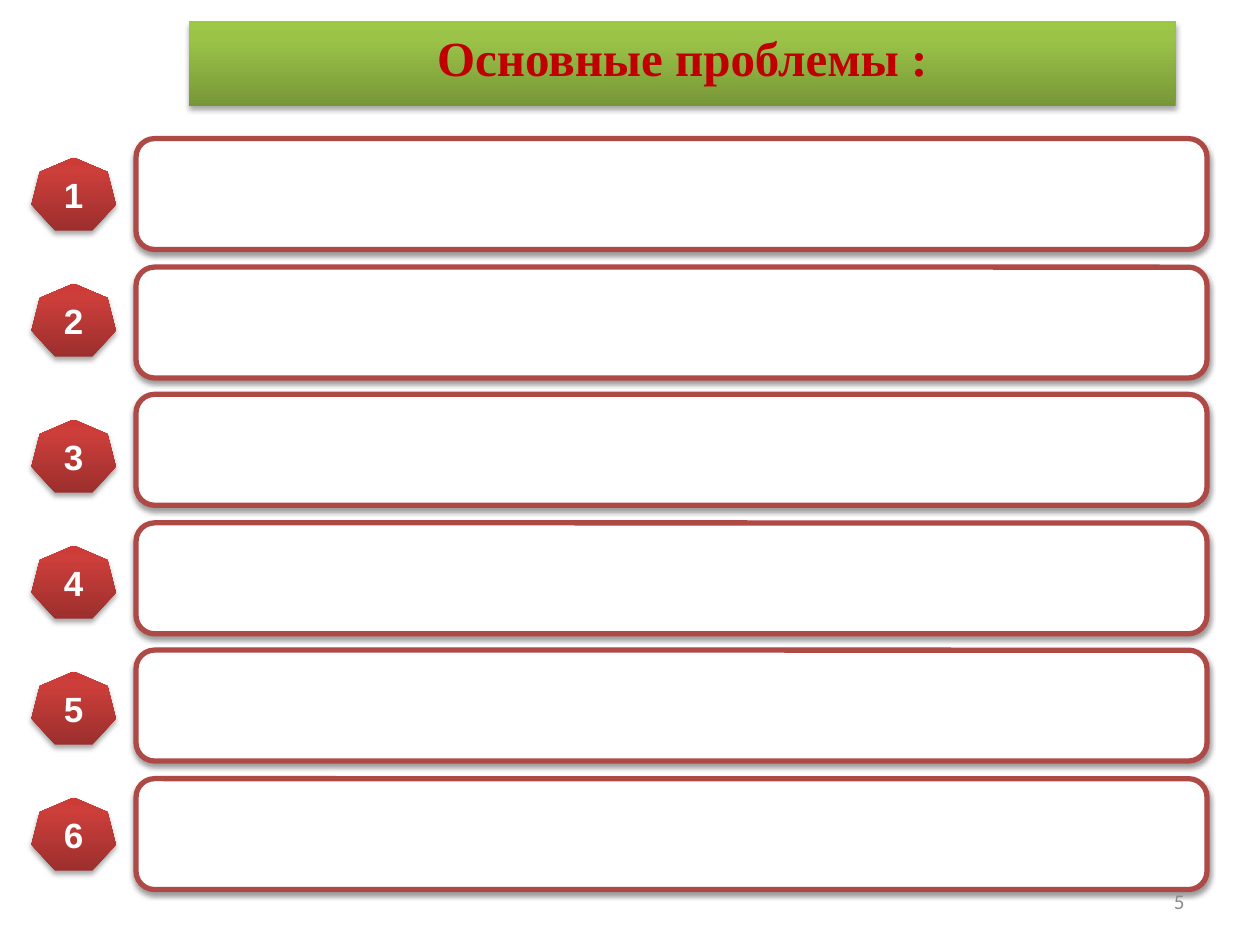
import copy
from dataclasses import dataclass

import lxml.etree
import pptx
import pptx.dml.color
import pptx.enum.shapes
import pptx.enum.text
import pptx.oxml.ns
import pptx.util

Inches = pptx.util.Inches
Pt = pptx.util.Pt
qn = pptx.oxml.ns.qn
SHAPE = pptx.enum.shapes.MSO_SHAPE
ALIGN = pptx.enum.text.PP_ALIGN
ANCHOR = pptx.enum.text.MSO_ANCHOR


@dataclass(frozen=True)
class Theme:
    white: str = "FFFFFF"
    frame: str = "AE4946"
    title: str = "C00000"
    gray: str = "8C8C8C"
    black: str = "000000"
    green: tuple = ((0, "779737"), (0.8, "9BC348"), (1, "9DC746"))
    red: tuple = ((0, "9C2F2D"), (0.8, "CB3E3A"), (1, "CE3B37"))
    large: int = 28
    medium: int = 20
    small: int = 12


THEME = Theme()


def color(code):
    return pptx.dml.color.RGBColor.from_string(code)


def place(shape, left, top, width, height):
    shape.left, shape.top = Inches(left), Inches(top)
    shape.width, shape.height = Inches(width), Inches(height)


def write(shape, text, *, font, size, tint, bold=False,
          align=ALIGN.CENTER, anchor=ANCHOR.MIDDLE):
    frame = shape.text_frame
    frame.word_wrap = True
    frame.auto_size = pptx.enum.text.MSO_AUTO_SIZE.NONE
    frame.vertical_anchor = anchor
    line = frame.paragraphs[0]
    line.alignment = align
    run = line.add_run()
    run.text = text
    run.font.name = font
    run.font.size = Pt(size)
    run.font.bold = bold
    run.font.color.rgb = color(tint)


def shade(shape, stops):
    fill = shape.fill
    fill.gradient()
    fill.gradient_angle = 90
    group = shape.element.spPr.find(".//" + qn("a:gsLst"))
    while len(group) < len(stops):
        group.append(copy.deepcopy(group[-1]))
    for stop, (point, tint) in zip(fill.gradient_stops, stops):
        stop.position = point
        stop.color.rgb = color(tint)
    shape.line.fill.background()


def shadow(shape, depth, alpha):
    shape.shadow.inherit = False
    effects = shape.element.spPr.find(qn("a:effectLst"))
    outer = lxml.etree.SubElement(
        effects, qn("a:outerShdw"), blurRad="40000", dist=str(Pt(depth)),
        dir="5400000", rotWithShape="0")
    tint = lxml.etree.SubElement(outer, qn("a:srgbClr"), val=THEME.black)
    lxml.etree.SubElement(tint, qn("a:alpha"), val=str(alpha * 1000))


def add_frame(slide, top):
    frame = slide.shapes.add_shape(SHAPE.ROUNDED_RECTANGLE, 0, 0, 0, 0)
    place(frame, 1.08, top, 8.5, 0.88)
    frame.fill.solid()
    frame.fill.fore_color.rgb = color(THEME.white)
    frame.line.color.rgb = color(THEME.frame)
    frame.line.width = Pt(3)
    shadow(frame, 1.6, 38)


def add_badge(slide, label, top):
    badge = slide.shapes.add_shape(SHAPE.HEPTAGON, 0, 0, 0, 0)
    place(badge, 0.25, top, 0.67, 0.58)
    shade(badge, THEME.red)
    shadow(badge, 1.8, 35)
    write(badge, label, font="Arial", size=THEME.medium,
          tint=THEME.white, bold=True)


def add_title(slide, text):
    title = slide.shapes.title
    place(title, 1.5, 0.17, 7.83, 0.67)
    shade(title, THEME.green)
    shadow(title, 1.8, 35)
    write(title, text, font="Times New Roman", size=THEME.large,
          tint=THEME.title, bold=True, anchor=ANCHOR.TOP)


def add_page(slide, label):
    page = slide.shapes.add_textbox(0, 0, 0, 0)
    place(page, 7.17, 6.95, 2.33, 0.4)
    write(page, label, font="Calibri", size=THEME.small,
          tint=THEME.gray, align=ALIGN.RIGHT)


def main():
    deck = pptx.Presentation()
    deck.slide_width, deck.slide_height = Inches(10), Inches(7.5)
    slide = deck.slides.add_slide(deck.slide_layouts[5])
    add_title(slide, "Основные проблемы :")
    tops = (1.25, 2.25, 3.33, 4.33, 5.33, 6.33)
    for index, top in enumerate(tops):
        add_frame(slide, round(1.1 + 1.016 * index, 2))
        add_badge(slide, str(index + 1), top)
    add_page(slide, "5")
    deck.save("out.pptx")


if __name__ == "__main__":
    main()
